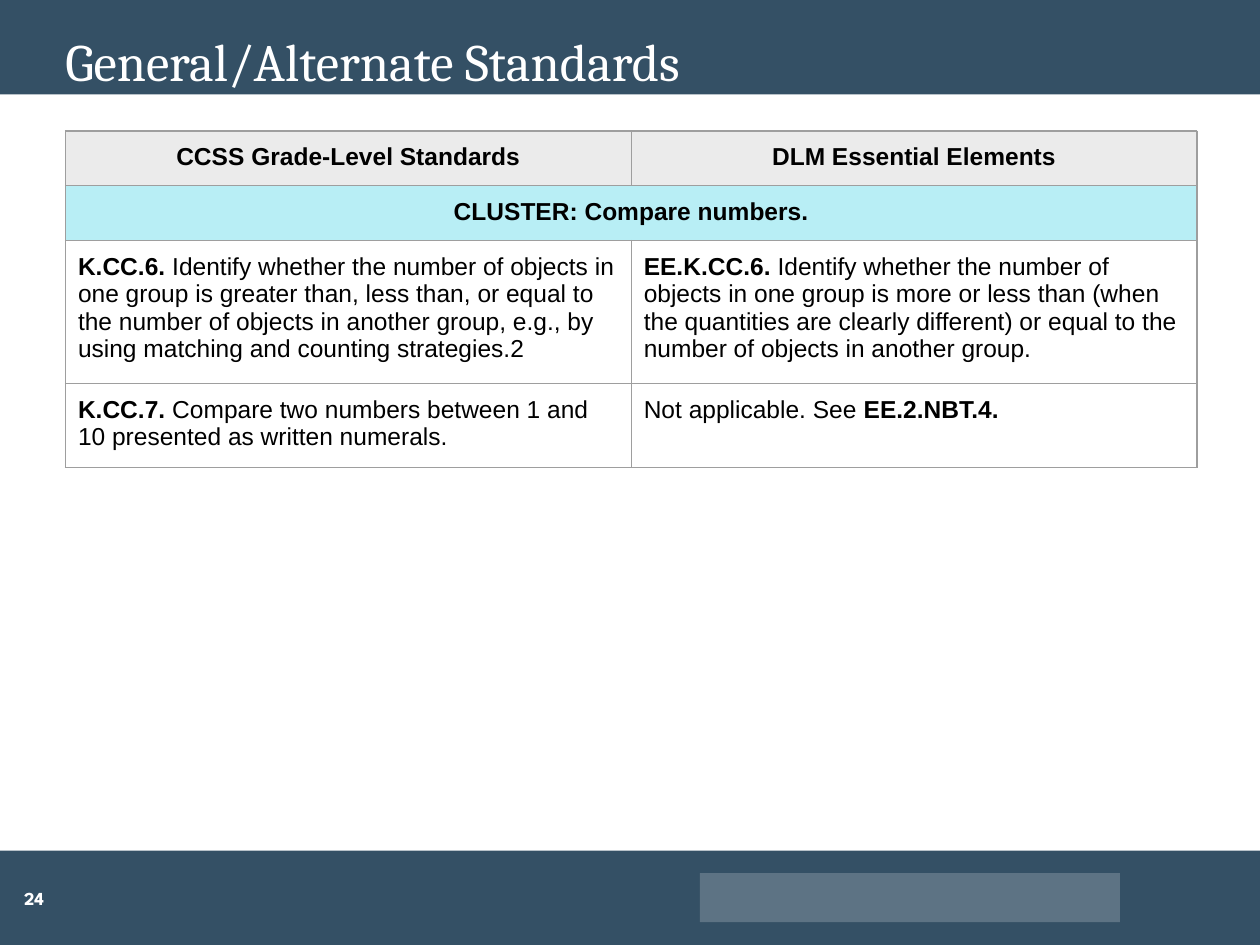
from pptx import Presentation
from pptx.dml.color import RGBColor
from pptx.enum.shapes import MSO_SHAPE
from pptx.enum.text import MSO_ANCHOR, PP_ALIGN
from pptx.oxml.ns import qn
from pptx.util import Pt
from lxml import etree

LEFT, CENTER = PP_ALIGN.LEFT, PP_ALIGN.CENTER
MIDDLE, BOTTOM = MSO_ANCHOR.MIDDLE, MSO_ANCHOR.BOTTOM
RECTANGLE = MSO_SHAPE.RECTANGLE

COLORS = {
    "band": "345065", "emblem": "5D7384", "white": "FFFFFF",
    "black": "000000", "header": "EBEBEB", "cluster": "B8EEF5",
    "border": "9E9E9E",
}
WIDTH, HEIGHT, BAND_HEIGHT = 720, 540, 54
FOOTER_TOP = HEIGHT - BAND_HEIGHT
MARGIN_LEFT, CONTENT_WIDTH = 37.4, 646.6
SIDES = ("left", "top", "right", "bottom")
BORDER_TAGS = ("a:lnL", "a:lnR", "a:lnT", "a:lnB")

# Each cell is a list of (text, bold) runs.
STANDARDS = [
    ([("K.CC.6. ", True),
      ("Identify whether the number of objects in one group is greater than, "
       "less than, or equal to the number of objects in another group, e.g., "
       "by using matching and counting strategies.2", False)],
     [("EE.K.CC.6.", True),
      (" Identify whether the number of objects in one group is more or less "
       "than (when the quantities are clearly different) or equal to the "
       "number of objects in another group.", False)]),
    ([("K.CC.7. ", True),
      ("Compare two numbers between 1 and 10 presented as written numerals.",
       False)],
     [("Not applicable. See ", False), ("EE.2.NBT.4.", True)]),
]


def rgb(name):
    return RGBColor.from_string(COLORS[name])


class SlideBuilder:
    def __init__(self, slide):
        self.slide = slide

    def rectangle(self, box, color):
        block = self.slide.shapes.add_shape(RECTANGLE, *map(Pt, box))
        block.shadow.inherit = False
        block.fill.solid()
        block.fill.fore_color.rgb = rgb(color)
        block.line.fill.background()

    def run(self, paragraph, text, color, **font):
        run = paragraph.add_run()
        run.text = text
        for attribute, value in font.items():
            setattr(run.font, attribute, value)
        run.font.color.rgb = rgb(color)

    def text(self, box, words, anchor=MIDDLE, insets=(0, 0, 0, 0),
             align=LEFT, spacing=None, **font):
        frame = self.slide.shapes.add_textbox(*map(Pt, box)).text_frame
        frame.word_wrap = True
        frame.vertical_anchor = anchor
        for side, inset in zip(SIDES, insets):
            setattr(frame, f"margin_{side}", Pt(inset))
        paragraph = frame.paragraphs[0]
        paragraph.alignment = align
        paragraph.line_spacing = spacing
        self.run(paragraph, words, "white", **font)

    def borders(self, cell):
        properties = cell._tc.get_or_add_tcPr()
        for position, tag in enumerate(BORDER_TAGS):
            edge = etree.Element(qn(tag), w=str(Pt(0.75)))
            fill = etree.SubElement(edge, qn("a:solidFill"))
            etree.SubElement(fill, qn("a:srgbClr"), val=COLORS["border"])
            properties.insert(position, edge)

    def cell(self, cell, runs, fill="white", align=LEFT):
        for side in SIDES:
            setattr(cell, f"margin_{side}", Pt(7.2))
        cell.fill.solid()
        cell.fill.fore_color.rgb = rgb(fill)
        paragraph = cell.text_frame.paragraphs[0]
        paragraph.alignment = align
        for text, bold in runs:
            self.run(paragraph, text, "black", name="Arial", size=Pt(14),
                     bold=bold)

    def table(self, left, top, width, row_heights, headings, cluster, rows):
        grid = self.slide.shapes.add_table(
            len(row_heights), len(headings), Pt(left), Pt(top), Pt(width),
            Pt(sum(row_heights))).table
        grid.first_row = grid.horz_banding = False
        for row, height in zip(grid.rows, row_heights):
            row.height = Pt(height)
        for column, heading in enumerate(headings):
            self.cell(grid.cell(0, column), [(heading, True)], "header", CENTER)
        grid.cell(1, 0).merge(grid.cell(1, len(headings) - 1))
        self.cell(grid.cell(1, 0), [(cluster, True)], "cluster", CENTER)
        for row, standards in enumerate(rows, start=2):
            for column, runs in enumerate(standards):
                self.cell(grid.cell(row, column), runs)
        for cell in grid.iter_cells():
            self.borders(cell)


def main():
    deck = Presentation()
    deck.slide_width, deck.slide_height = Pt(WIDTH), Pt(HEIGHT)
    page = SlideBuilder(deck.slides.add_slide(deck.slide_layouts[6]))

    for top in (0, FOOTER_TOP):
        page.rectangle((0, top, WIDTH, BAND_HEIGHT), "band")
    page.rectangle((400, 499, 240, 28), "emblem")
    page.text((0, FOOTER_TOP, 38.9, BAND_HEIGHT), "24",
              insets=(5, 2.9, 5, 2.9), align=CENTER,
              name="League Spartan", size=Pt(10.5), bold=True)
    page.text((MARGIN_LEFT, 0, CONTENT_WIDTH, 53.3),
              "General/Alternate Standards", anchor=BOTTOM, spacing=0.9,
              name="Cambria", size=Pt(30))
    page.table(MARGIN_LEFT, 74.9, CONTENT_WIDTH, (30.24, 30.24, 77.5, 46.5),
               ("CCSS Grade-Level Standards", "DLM Essential Elements"),
               "CLUSTER: Compare numbers.", STANDARDS)
    deck.save("out.pptx")


if __name__ == "__main__":
    main()
